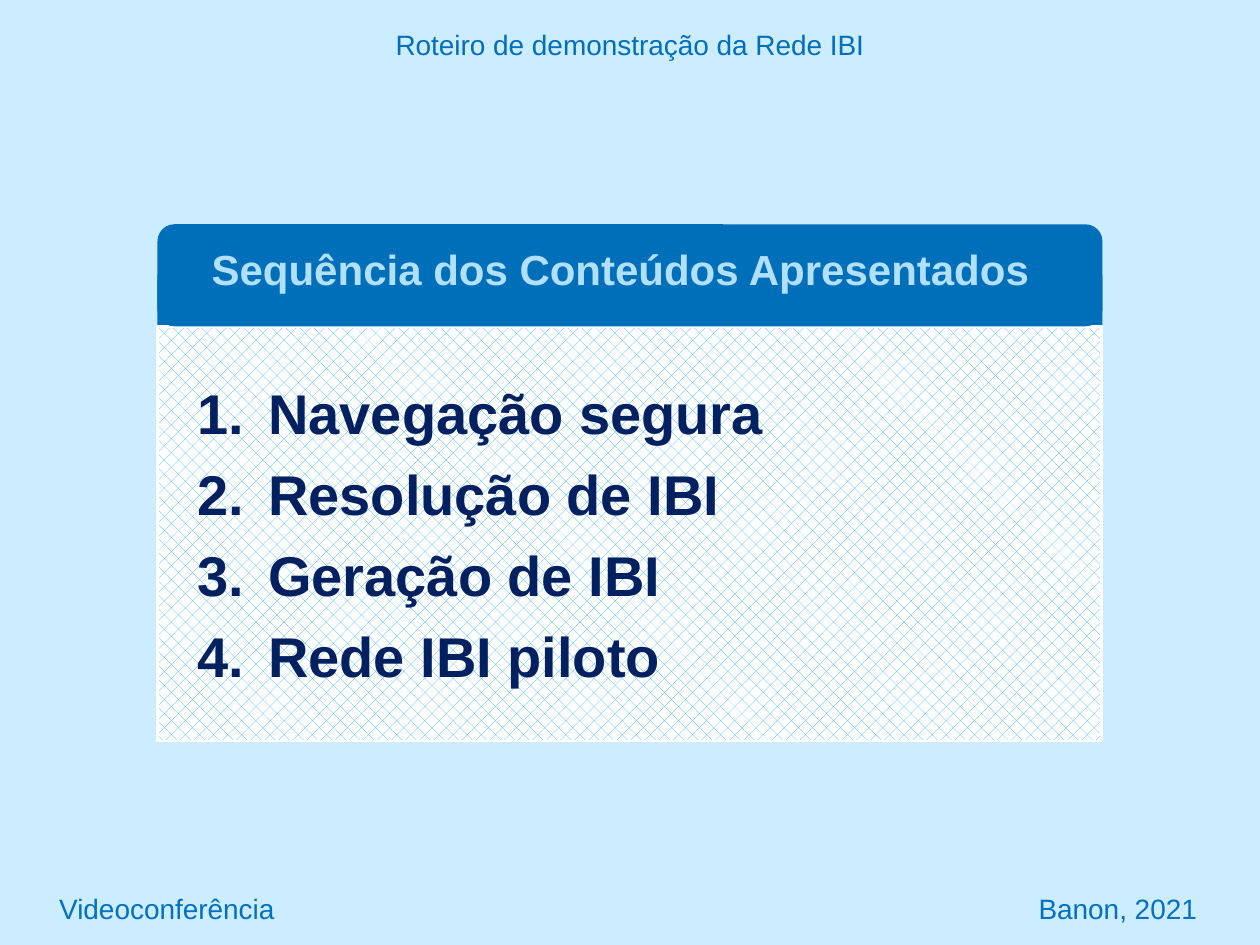
from lxml import etree
from pptx import Presentation
from pptx.dml.color import RGBColor
from pptx.enum.dml import MSO_PATTERN
from pptx.enum.shapes import MSO_SHAPE
from pptx.enum.text import MSO_ANCHOR, PP_ALIGN
from pptx.oxml.ns import qn
from pptx.util import Inches, Pt

RECTANGLE, ROUNDED = MSO_SHAPE.RECTANGLE, MSO_SHAPE.ROUNDED_RECTANGLE
DOTTED = MSO_PATTERN.PERCENT_25
TOP, MIDDLE = MSO_ANCHOR.TOP, MSO_ANCHOR.MIDDLE
LEFT, CENTER = PP_ALIGN.LEFT, PP_ALIGN.CENTER
COLORS = {
    "background": "CCECFF", "header": "006FBA", "title": "B0E0FE",
    "item": "002060", "footer": "0070C0", "pattern": "3BB1FF", "white": "FFFFFF",
}
RGB = {name: RGBColor.from_string(value) for name, value in COLORS.items()}


def add_panel(kind, left, top, width, height):
    shape = slide.shapes.add_shape(
        kind, Inches(left), Inches(top), Inches(width), Inches(height))
    shape.shadow.inherit = False
    return shape


def write_paragraph(paragraph, text, color, size, bold=False, align=LEFT, before=0):
    paragraph.alignment = align
    paragraph.space_before = Pt(before)
    run = paragraph.add_run()
    run.text = text
    for name, value in {"name": "Arial", "size": Pt(size), "bold": bold}.items():
        setattr(run.font, name, value)
    run.font.color.rgb = RGB[color]


presentation = Presentation()
presentation.slide_width, presentation.slide_height = Inches(10), Inches(7.5)
slide = presentation.slides.add_slide(presentation.slide_layouts[6])
slide.background.fill.solid()
slide.background.fill.fore_color.rgb = RGB["background"]

# Numbered list on a patterned panel
panel = add_panel(RECTANGLE, 1.25, 2.59, 7.49, 3.29)
panel.fill.patterned()
panel.fill.pattern = DOTTED
panel.fill.fore_color.rgb = RGB["pattern"]
panel.fill.back_color.rgb = RGB["white"]
panel.line.color.rgb = RGB["white"]
panel.line.width = Pt(1.5)
frame = panel.text_frame
frame.word_wrap = True
frame.vertical_anchor = MIDDLE
items = ["Navegação segura", "Resolução de IBI", "Geração de IBI", "Rede IBI piloto"]
for index, item in enumerate(items):
    paragraph = frame.add_paragraph() if index else frame.paragraphs[0]
    write_paragraph(paragraph, item, "item", 32, bold=True, before=8 if index else 3)
    properties = paragraph._p.get_or_add_pPr()
    properties.set("marL", str(Inches(0.78)))
    properties.set("indent", str(Inches(-0.56)))
    etree.SubElement(properties, qn("a:buFont"), typeface="+mj-lt")
    etree.SubElement(properties, qn("a:buAutoNum"), type="arabicPeriod")

# Header: a rounded bar with its lower corners squared off
for kind, top, height in [(RECTANGLE, 2.18, 0.4), (ROUNDED, 1.78, 0.81)]:
    bar = add_panel(kind, 1.25, top, 7.5, height)
    bar.fill.solid()
    bar.fill.fore_color.rgb = RGB["header"]
    bar.line.fill.background()

# Panel title, page heading and footer
labels = [
    ("Sequência dos Conteúdos Apresentados", (1.3, 1.88, 7.03, 0.5), 0.38,
     TOP, ("title", 24, True, LEFT, 3)),
    ("Roteiro de demonstração da Rede IBI", (0, 0.17, 10, 0.37), 0.1,
     TOP, ("header", 16, False, CENTER)),
    ("Videoconferência\tBanon, 2021", (0, 7, 10, 0.42), 0.47,
     MIDDLE, ("footer", 16)),
]
for text, box, margin, anchor, style in labels:
    label = slide.shapes.add_textbox(*map(Inches, box))
    frame = label.text_frame
    settings = {"word_wrap": True, "vertical_anchor": anchor,
                "margin_left": Inches(margin), "margin_right": Inches(0.1)}
    for name, value in settings.items():
        setattr(frame, name, value)
    write_paragraph(frame.paragraphs[0], text, *style)

# The footer date is right-aligned at a tab stop
footer_properties = frame.paragraphs[0]._p.get_or_add_pPr()
tabs = etree.SubElement(footer_properties, qn("a:tabLst"))
etree.SubElement(tabs, qn("a:tab"), pos=str(Inches(9.03)), algn="r")

presentation.save("out.pptx")
